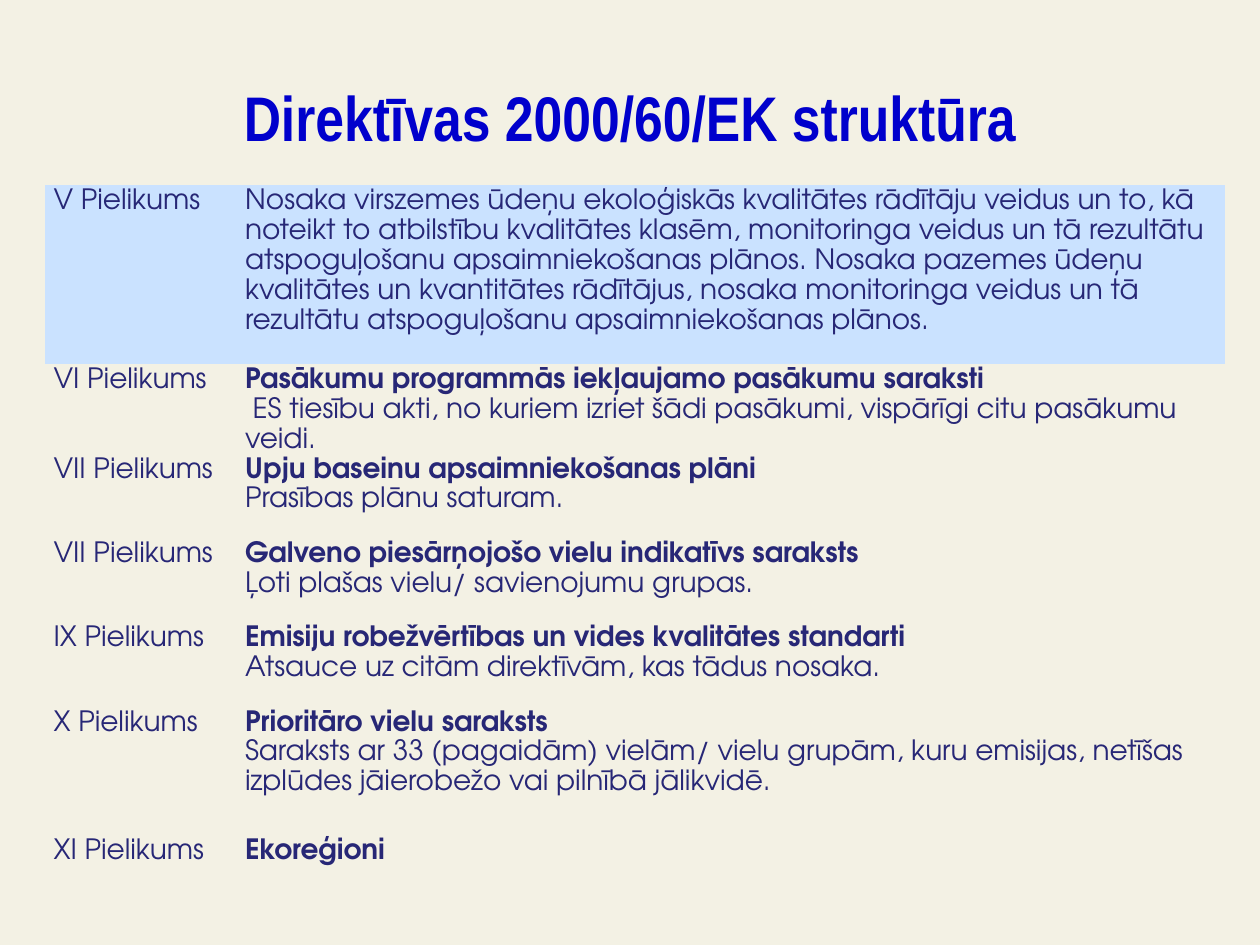
from dataclasses import dataclass

from lxml import etree
from pptx import Presentation
from pptx.dml.color import RGBColor
from pptx.enum.text import MSO_ANCHOR, PP_ALIGN
from pptx.oxml.ns import qn
from pptx.util import Cm, Pt

CENTER = PP_ALIGN.CENTER
MIDDLE = MSO_ANCHOR.MIDDLE
TITLE_ONLY = 5
BORDERS = ("a:lnL", "a:lnR", "a:lnT", "a:lnB")

TITLE = "Direktīvas 2000/60/EK struktūra"
ANNEXES = [
    ("V Pielikums", "",
     "Nosaka virszemes ūdeņu ekoloģiskās kvalitātes rādītāju veidus un to, kā noteikt to "
     "atbilstību kvalitātes klasēm, monitoringa veidus un tā rezultātu atspoguļošanu "
     "apsaimniekošanas plānos. Nosaka pazemes ūdeņu kvalitātes un kvantitātes rādītājus, "
     "nosaka monitoringa veidus un tā rezultātu atspoguļošanu apsaimniekošanas plānos."),
    ("VI Pielikums", "Pasākumu programmās iekļaujamo pasākumu saraksti",
     " ES tiesību akti, no kuriem izriet šādi pasākumi, vispārīgi citu pasākumu veidi."),
    ("VII Pielikums", "Upju baseinu apsaimniekošanas plāni", "Prasības plānu saturam."),
    ("VII Pielikums", "Galveno piesārņojošo vielu indikatīvs saraksts",
     "Ļoti plašas vielu/ savienojumu grupas."),
    ("IX Pielikums", "Emisiju robežvērtības un vides kvalitātes standarti",
     "Atsauce uz citām direktīvām, kas tādus nosaka."),
    ("X Pielikums", "Prioritāro vielu saraksts",
     "Saraksts ar 33 (pagaidām) vielām/ vielu grupām, kuru emisijas, netīšas izplūdes "
     "jāierobežo vai pilnībā jālikvidē."),
    ("XI Pielikums", "Ekoreģioni", ""),
]
COLUMN_WIDTHS = (3.86, 19.94)
ROW_HEIGHTS = (3.61, 1.7, 1.7, 1.7, 1.7, 2.59, 0.81)


@dataclass(frozen=True)
class Theme:
    background: RGBColor = RGBColor(0xF3, 0xF1, 0xE4)
    heading: RGBColor = RGBColor(0x00, 0x00, 0xCC)
    text: RGBColor = RGBColor(0x27, 0x27, 0x76)
    highlight: RGBColor = RGBColor(0xCA, 0xE2, 0xFF)
    heading_font: str = "Arial Narrow"
    text_font: str = "TeX Gyre Adventor"
    heading_size: Pt = Pt(36)
    text_size: Pt = Pt(16)
    line_spacing: float = 1.15


class SlideBuilder:
    """Adds themed elements to the current slide."""

    def __init__(self, slide, theme):
        self.slide = slide
        self.theme = theme
        fill = slide.background.fill
        fill.solid()
        fill.fore_color.rgb = theme.background

    def style(self, paragraph, name, size, color, bold):
        for run in paragraph.runs:
            run.font.name = name
            run.font.size = size
            run.font.color.rgb = color
            run.font.bold = bold

    def title(self, text, left, top, width, height):
        heading = self.slide.shapes.title
        heading.left, heading.top = Cm(left), Cm(top)
        heading.width, heading.height = Cm(width), Cm(height)
        frame = heading.text_frame
        frame.text = text
        frame.vertical_anchor = MIDDLE
        paragraph = frame.paragraphs[0]
        paragraph.alignment = CENTER
        theme = self.theme
        self.style(paragraph, theme.heading_font, theme.heading_size, theme.heading, True)

    def cell(self, cell, lines, highlighted):
        cell.margin_left = cell.margin_right = Cm(0.18)
        cell.margin_top = cell.margin_bottom = 0
        if highlighted:
            cell.fill.solid()
            cell.fill.fore_color.rgb = self.theme.highlight
        else:
            cell.fill.background()
        properties = cell._tc.get_or_add_tcPr()
        for position, tag in enumerate(BORDERS):
            border = etree.Element(qn(tag), w="0")
            etree.SubElement(border, qn("a:noFill"))
            properties.insert(position, border)
        theme = self.theme
        frame = cell.text_frame
        frame.text = "\n".join(text for text, _ in lines)
        for paragraph, (_, bold) in zip(frame.paragraphs, lines):
            paragraph.line_spacing = theme.line_spacing
            self.style(paragraph, theme.text_font, theme.text_size, theme.text, bold)

    def table(self, annexes, left, top, widths, heights):
        table = self.slide.shapes.add_table(
            len(heights), len(widths), Cm(left), Cm(top),
            Cm(sum(widths)), Cm(sum(heights))).table
        table.first_row = table.horz_banding = False
        for column, width in zip(table.columns, widths):
            column.width = Cm(width)
        for index, (annex, heading, description) in enumerate(annexes):
            table.rows[index].height = Cm(heights[index])
            details = [(text, bold) for text, bold in ((heading, True), (description, False)) if text]
            self.cell(table.cell(index, 0), [(annex, False)], index == 0)
            self.cell(table.cell(index, 1), details, index == 0)


def main():
    presentation = Presentation()
    presentation.slide_width, presentation.slide_height = Cm(25.4), Cm(19.05)
    slide = presentation.slides.add_slide(presentation.slide_layouts[TITLE_ONLY])
    builder = SlideBuilder(slide, Theme())
    builder.title(TITLE, 1.27, 0.76, 22.86, 3.18)
    builder.table(ANNEXES, 0.9, 3.73, COLUMN_WIDTHS, ROW_HEIGHTS)
    presentation.save("out.pptx")


if __name__ == "__main__":
    main()
